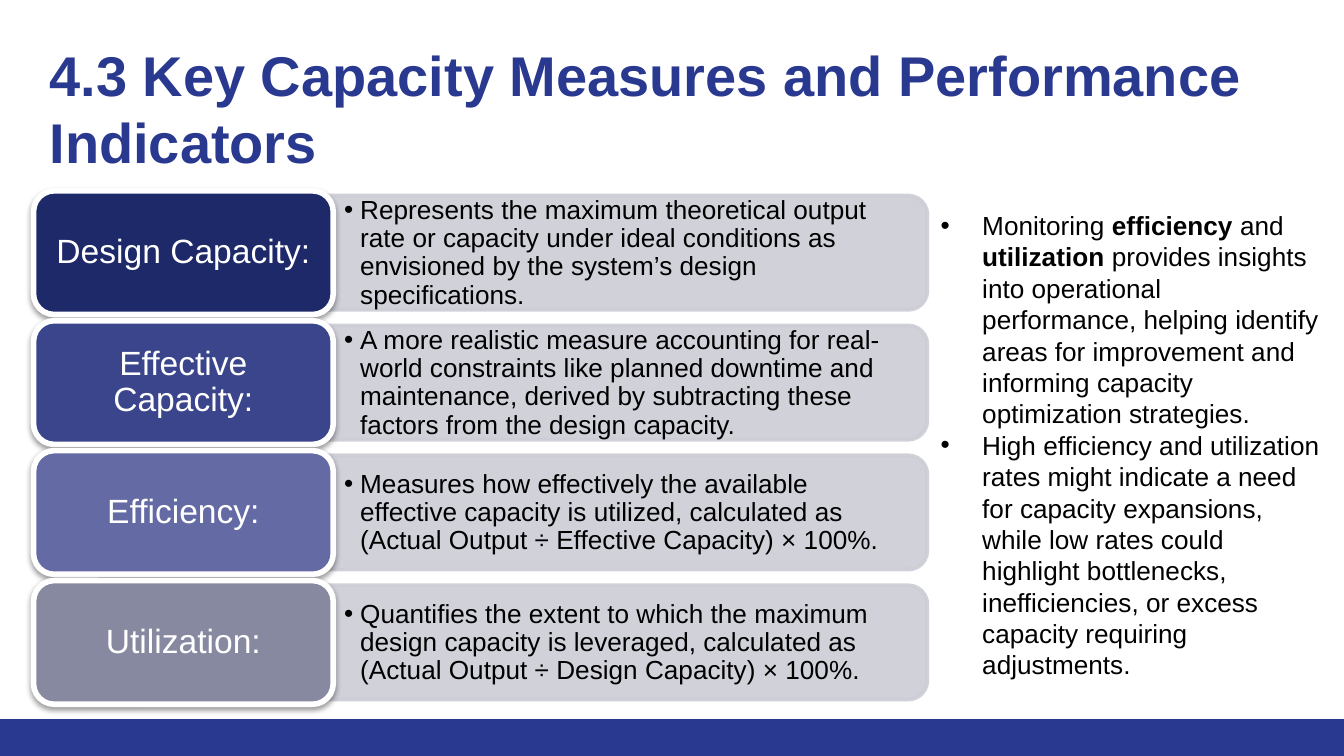
from lxml import etree
from pptx import Presentation
from pptx.dml.color import RGBColor
from pptx.enum.shapes import MSO_SHAPE
from pptx.enum.text import MSO_ANCHOR, PP_ALIGN
from pptx.oxml import parse_xml
from pptx.oxml.ns import nsdecls, qn
from pptx.util import Inches, Pt

RECT = MSO_SHAPE.RECTANGLE
CARD = MSO_SHAPE.ROUNDED_RECTANGLE
PANEL = MSO_SHAPE.ROUND_2_SAME_RECTANGLE
TOP, MIDDLE = MSO_ANCHOR.TOP, MSO_ANCHOR.MIDDLE
LEFT, CENTER = PP_ALIGN.LEFT, PP_ALIGN.CENTER

FONT = "Arial"
BLUE, WHITE, BLACK, GREY = "2A3990", "FFFFFF", "000000", "CDCDD6"

FIRST_TOP, LAST_TOP = 1.42, 4.32
CARD_HEIGHT = 0.92
PANEL_LENGTH, PANEL_DEPTH = 4.61, 0.85

MEASURES = [
    ("Design Capacity:", "1E2969",
     "Represents the maximum theoretical output rate or capacity under ideal "
     "conditions as envisioned by the system’s design specifications."),
    ("Effective Capacity:", "3B458C",
     "A more realistic measure accounting for real-world constraints like planned "
     "downtime and maintenance, derived by subtracting these factors from the "
     "design capacity."),
    ("Efficiency:", "636AA4",
     "Measures how effectively the available effective capacity is utilized, "
     "calculated as (Actual Output ÷ Effective Capacity) × 100%."),
    ("Utilization:", "8789A1",
     "Quantifies the extent to which the maximum design capacity is leveraged, "
     "calculated as (Actual Output ÷ Design Capacity) × 100%."),
]

# Each paragraph is a list of (text, bold) runs
INSIGHTS = [
    [("Monitoring ", False), ("efficiency", True), (" and ", False),
     ("utilization", True),
     (" provides insights into operational performance, helping identify areas for "
      "improvement and informing capacity optimization strategies.", False)],
    [("High efficiency and utilization rates might indicate a need for capacity "
      "expansions, while low rates could highlight bottlenecks, inefficiencies, or "
      "excess capacity requiring adjustments.", False)],
]


def color(hex_value):
    return RGBColor.from_string(hex_value)


def set_alpha(fill, percent):
    for solid in fill.iter(qn("a:srgbClr")):
        etree.SubElement(solid, qn("a:alpha")).set("val", str(percent * 1000))


def add_bullet(paragraph, indent):
    properties = paragraph._p.get_or_add_pPr()
    properties.set("marL", str(Inches(indent)))
    properties.set("indent", str(-Inches(indent)))
    etree.SubElement(properties, qn("a:buFont")).set("typeface", FONT)
    etree.SubElement(properties, qn("a:buChar")).set("char", "•")


def add_card_shadow(shape):
    shape._element.spPr.append(parse_xml(
        f'<a:effectLst {nsdecls("a")}>'
        f'<a:outerShdw blurRad="{Pt(3.1)}" dist="{Pt(1.6)}" dir="5400000" rotWithShape="0">'
        '<a:srgbClr val="000000"><a:alpha val="38000"/></a:srgbClr>'
        '</a:outerShdw></a:effectLst>'))


def write(shape, paragraphs, size=14, hex_value=BLACK, align=LEFT, anchor=TOP,
          insets=(0.1, 0.05), spacing=None, bullet=None):
    frame = shape.text_frame
    frame.word_wrap = True
    frame.vertical_anchor = anchor
    frame.margin_left = frame.margin_right = Inches(insets[0])
    frame.margin_top = frame.margin_bottom = Inches(insets[1])
    for index, runs in enumerate(paragraphs):
        paragraph = frame.add_paragraph() if index else frame.paragraphs[0]
        paragraph.alignment = align
        if spacing:
            paragraph.line_spacing = spacing
        if bullet:
            add_bullet(paragraph, bullet)
        for text, bold in runs:
            run = paragraph.add_run()
            run.text = text
            run.font.name = FONT
            run.font.size = Pt(size)
            run.font.bold = bold
            run.font.color.rgb = color(hex_value)


def add_box(slide, left, top, width, height):
    return slide.shapes.add_textbox(
        Inches(left), Inches(top), Inches(width), Inches(height))


def add_block(slide, kind, left, top, width, height, fill, line=None, line_width=0):
    block = slide.shapes.add_shape(
        kind, Inches(left), Inches(top), Inches(width), Inches(height))
    block.fill.solid()
    block.fill.fore_color.rgb = color(fill)
    if line:
        block.line.color.rgb = color(line)
        block.line.width = Pt(line_width)
    else:
        block.line.fill.background()
    return block


def add_measure(slide, top, name, fill, description):
    middle = top + CARD_HEIGHT / 2

    # Description panel, turned so that its rounded end faces right
    panel = add_block(slide, PANEL, 4.17, middle - PANEL_LENGTH / 2,
                      PANEL_DEPTH, PANEL_LENGTH, GREY, GREY, 2)
    panel.rotation = 90
    panel.shadow.inherit = False
    set_alpha(panel._element.spPr, 90)
    description_box = add_box(slide, 2.29, middle - 0.38, 4.56, 0.77)
    write(description_box, [[(description, False)]], anchor=MIDDLE,
          insets=(0.27, 0.14), spacing=0.9, bullet=0.12)

    # Name card
    card = add_block(slide, CARD, 0.25, top, 2.23, CARD_HEIGHT, fill, WHITE, 3)
    add_card_shadow(card)
    write(card, [[(name, False)]], size=18, hex_value=WHITE, align=CENTER,
          anchor=MIDDLE, insets=(0.07, 0.04), spacing=0.9)


def main():
    deck = Presentation()
    deck.slide_width, deck.slide_height = Inches(10), Inches(5.625)
    slide = deck.slides.add_slide(deck.slide_layouts[6])

    # Footer band and title
    footer = add_block(slide, RECT, 0, 5.35, 10, 0.28, BLUE)
    footer.shadow.inherit = False
    title = add_box(slide, 0.27, 0.2, 9.39, 0.89)
    write(title, [[("4.3 Key Capacity Measures and Performance Indicators", True)]],
          size=30, hex_value=BLUE, insets=(0.1, 0.1))

    # Four measures at equal steps
    step = (LAST_TOP - FIRST_TOP) / (len(MEASURES) - 1)
    for index, measure in enumerate(MEASURES):
        add_measure(slide, FIRST_TOP + index * step, *measure)

    # Insights on the right
    insights = add_box(slide, 6.9, 1.51, 3.02, 3.64)
    write(insights, INSIGHTS, bullet=0.31)

    deck.save("out.pptx")


if __name__ == "__main__":
    main()
